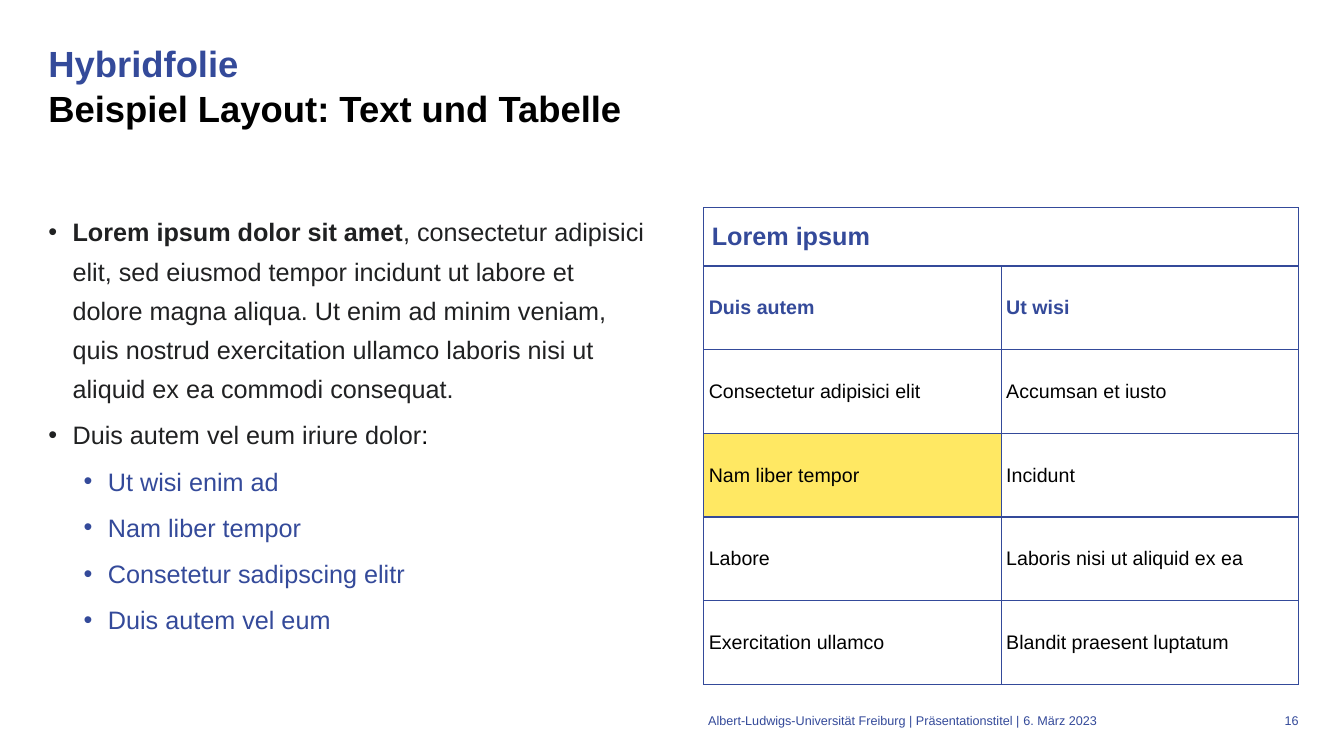
from lxml import etree
from pptx import Presentation
from pptx.dml.color import RGBColor
from pptx.enum import text
from pptx.oxml import ns
from pptx.util import Inches, Pt

BLUE = RGBColor(0x34, 0x4A, 0x9A)
BLACK = RGBColor(0x00, 0x00, 0x00)
DARK = RGBColor(0x20, 0x21, 0x22)
YELLOW = RGBColor(0xFF, 0xE8, 0x63)
FONT = "Arial"

presentation = Presentation()
presentation.slide_width = Inches(13.33)
presentation.slide_height = Inches(7.5)
slide = presentation.slides.add_slide(presentation.slide_layouts[6])


def add_text_frame(left, top, width, height, inset=0):
    frame = slide.shapes.add_textbox(
        Inches(left), Inches(top), Inches(width), Inches(height)).text_frame
    frame.word_wrap = True
    frame.margin_left = Inches(inset)
    frame.margin_top = frame.margin_right = frame.margin_bottom = 0
    return frame


def set_font(font, size, color, bold=False):
    font.name = FONT
    font.size = Pt(size)
    font.color.rgb = color
    font.bold = bold


# Title
paragraph = add_text_frame(0.48, 0.4, 12.4, 1.45).paragraphs[0]
paragraph.line_spacing = Pt(32)
set_font(paragraph.font, 26, BLACK, True)
run = paragraph.add_run()
run.text = "Hybridfolie"
set_font(run.font, 26, BLUE, True)
paragraph.add_line_break()
run = paragraph.add_run()
run.text = "Beispiel Layout: Text und Tabelle"
set_font(run.font, 26, BLACK, True)

# Bulleted text: level and runs of (words, colour, bold)
bullets = [
    (0, [("Lorem ipsum dolor sit amet", DARK, True),
         (", consectetur adipisici elit, sed eiusmod tempor incidunt ut labore "
          "et dolore magna aliqua. Ut enim ad minim veniam, quis nostrud "
          "exercitation ullamco laboris nisi ut aliquid ex ea commodi "
          "consequat.", DARK, False)]),
    (0, [("Duis autem vel eum iriure dolor", DARK, False), (":", BLACK, False)]),
]
for words in ("Ut wisi enim ad", "Nam liber tempor",
              "Consetetur sadipscing elitr", "Duis autem vel eum"):
    bullets.append((1, [(words, BLUE, False)]))

body = add_text_frame(0.48, 2.06, 5.91, 4.72)
for index, (level, runs) in enumerate(bullets):
    paragraph = body.add_paragraph() if index else body.paragraphs[0]
    paragraph.level = level
    paragraph.line_spacing = Pt(28)
    if index:
        paragraph.space_before = Pt(5)
    properties = paragraph._p.get_or_add_pPr()
    properties.set("marL", str(Inches(0.59 if level else 0.24)))
    properties.set("indent", str(Inches(-0.24)))
    etree.SubElement(properties, ns.qn("a:buFont")).set("typeface", FONT)
    etree.SubElement(properties, ns.qn("a:buChar")).set("char", "•")
    for words, color, bold in runs:
        run = paragraph.add_run()
        run.text = words
        set_font(run.font, 18, color, bold)

# Table
rows = [
    ("Lorem ipsum", ""),
    ("Duis autem", "Ut wisi"),
    ("Consectetur adipisici elit", "Accumsan et iusto"),
    ("Nam liber tempor", "Incidunt"),
    ("Labore", "Laboris nisi ut aliquid ex ea"),
    ("Exercitation ullamco", "Blandit praesent luptatum"),
]
table = slide.shapes.add_table(
    len(rows), 2, Inches(6.98), Inches(2.06), Inches(5.9), Inches(4.73)).table
table.first_row = table.horz_banding = False
for column in table.columns:
    column.width = Inches(2.95)
for row_index, row in enumerate(rows):
    table.rows[row_index].height = Inches(0.83 if row_index else 0.58)
    for column_index, words in enumerate(row):
        cell = table.cell(row_index, column_index)
        cell.vertical_anchor = text.MSO_ANCHOR.MIDDLE
        side, edge = (0.05, 0.05) if row_index else (0.08, 0.04)
        cell.margin_left = cell.margin_right = Inches(side)
        cell.margin_top = cell.margin_bottom = Inches(edge)
        cell.text = words
        heading = row_index < 2
        set_font(cell.text_frame.paragraphs[0].font, 14 if row_index else 18,
                 BLUE if heading else BLACK, heading)
        # Borders go before the fill in the cell properties
        properties = cell._tc.get_or_add_tcPr()
        for border in ("a:lnL", "a:lnR", "a:lnT", "a:lnB"):
            line = etree.SubElement(properties, ns.qn(border), w=str(Pt(1)))
            fill = etree.SubElement(line, ns.qn("a:solidFill"))
            etree.SubElement(fill, ns.qn("a:srgbClr"), val=str(BLUE))
        if words == "Nam liber tempor":
            cell.fill.solid()
            cell.fill.fore_color.rgb = YELLOW
        else:
            cell.fill.background()
table.cell(0, 0).merge(table.cell(0, 1))

# Footer: left, width, inset, alignment, words
footers = [
    (3.26, 6.85, 0, text.PP_ALIGN.RIGHT,
     "Albert-Ludwigs-Universität Freiburg | Präsentationstitel |"),
    (10.11, 1.57, 0.04, text.PP_ALIGN.LEFT, "6. März 2023"),
    (12.49, 0.39, 0, text.PP_ALIGN.RIGHT, "16"),
]
for left, width, inset, alignment, words in footers:
    paragraph = add_text_frame(left, 7.07, width, 0.2, inset).paragraphs[0]
    paragraph.text = words
    paragraph.alignment = alignment
    set_font(paragraph.font, 9, BLUE)

presentation.save("out.pptx")
